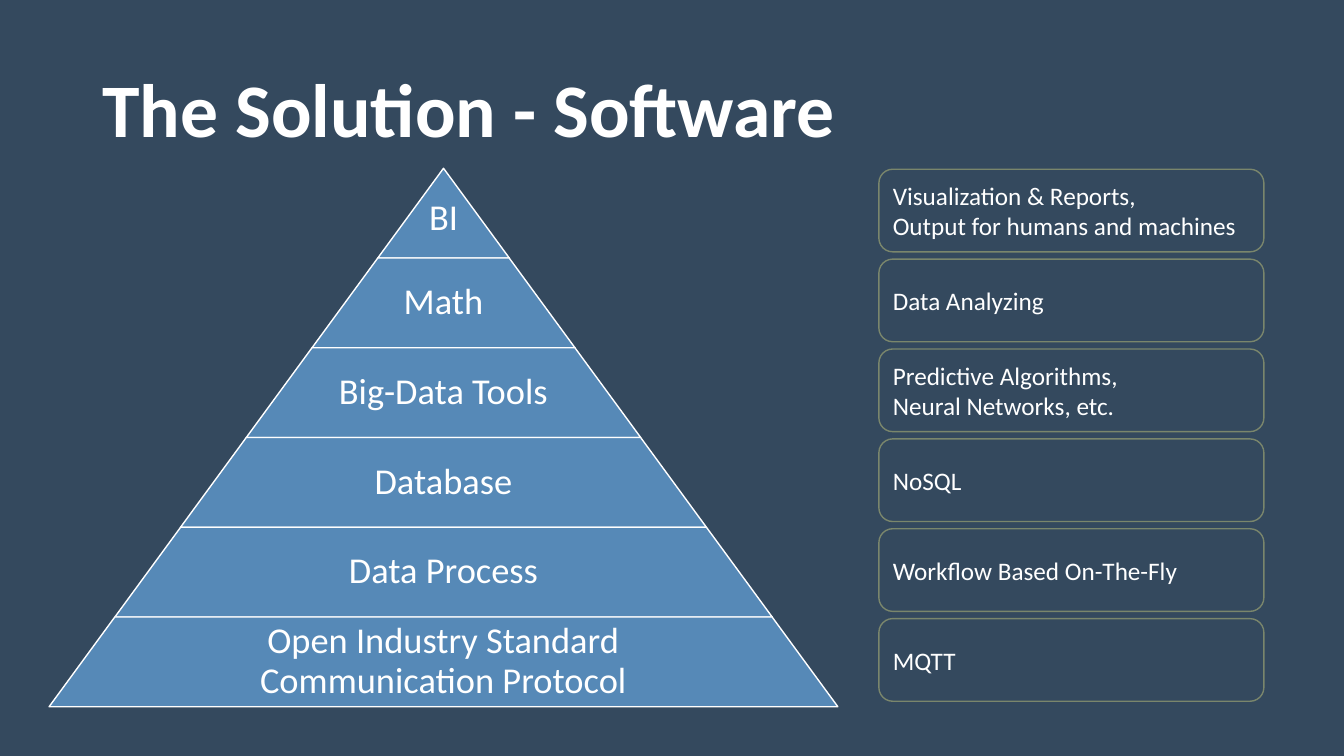
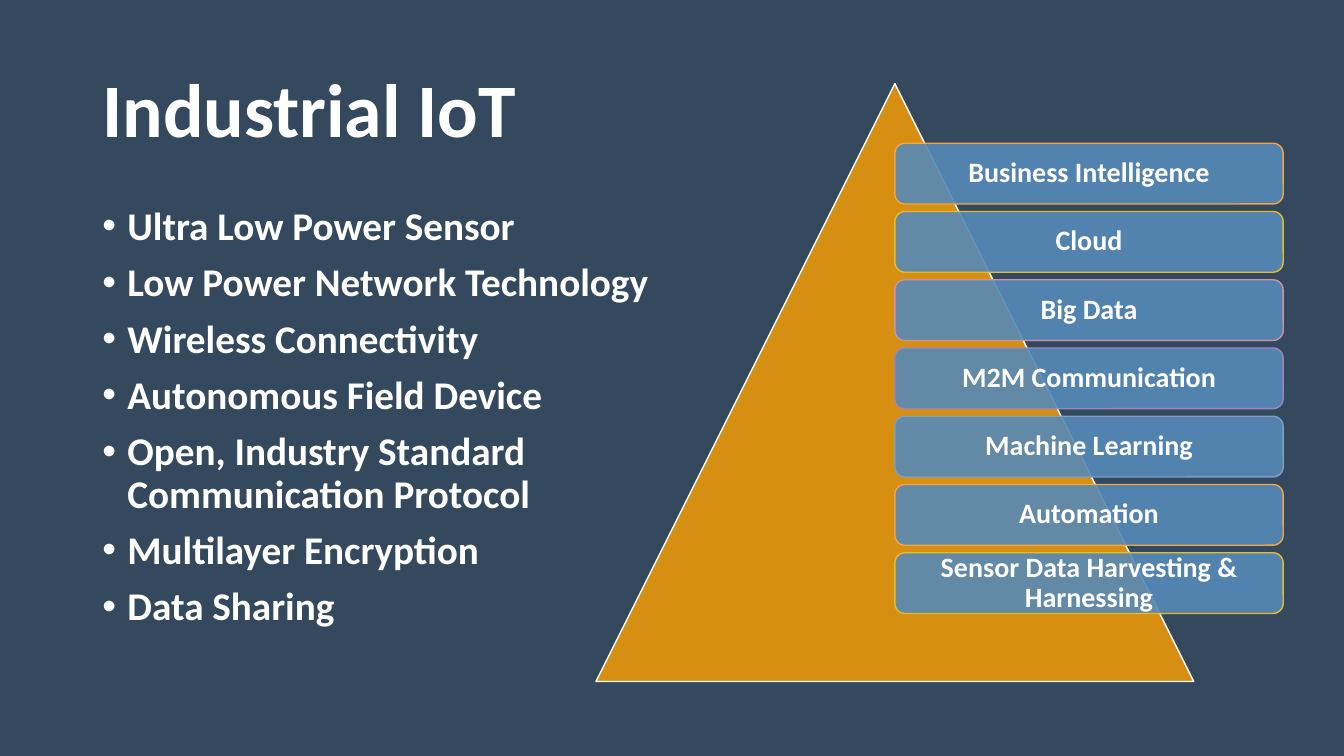
from pptx import Presentation
from pptx.dml.color import RGBColor
from pptx.enum import shapes, text
from pptx.oxml import ns
from pptx.util import Pt
from lxml import etree

# Shared style
NAVY = RGBColor(0x34, 0x49, 0x5E)
WHITE = RGBColor(0xFF, 0xFF, 0xFF)
BLUE = RGBColor(0x56, 0x89, 0xB7)
AMBER = RGBColor(0xD6, 0x8F, 0x10)
OLIVE = RGBColor(0x7A, 0x86, 0x6C)
ORANGE = RGBColor(0xF3, 0xA4, 0x47)
YELLOW = RGBColor(0xE7, 0xBC, 0x29)
PINK = RGBColor(0xD0, 0x92, 0xA7)
PURPLE = RGBColor(0x9C, 0x85, 0xC0)
STEEL = RGBColor(0x80, 0x9E, 0xC2)
FONT = "Calibri"
CENTER, LEFT = text.PP_ALIGN.CENTER, text.PP_ALIGN.LEFT
SHAPE = shapes.MSO_SHAPE

# Content: pyramid layers with their explanations, from the top down
SOFTWARE_LAYERS = [
    ("BI", ["Visualization & Reports,", "Output for humans and machines"]),
    ("Math", ["Data Analyzing"]),
    ("Big-Data Tools", ["Predictive Algorithms,", "Neural Networks, etc."]),
    ("Database", ["NoSQL"]),
    ("Data Process", ["Workflow Based On-The-Fly"]),
    ("Open Industry Standard Communication Protocol", ["MQTT"]),
]
IOT_FEATURES = [
    "Ultra Low Power Sensor",
    "Low Power Network Technology",
    "Wireless Connectivity",
    "Autonomous Field Device",
    "Open, Industry Standard Communication Protocol",
    "Multilayer Encryption",
    "Data Sharing",
]
IOT_LEVELS = [
    ("Business Intelligence", ORANGE),
    ("Cloud", YELLOW),
    ("Big Data", PINK),
    ("M2M Communication", PURPLE),
    ("Machine Learning", STEEL),
    ("Automation", ORANGE),
    ("Sensor Data Harvesting & Harnessing", YELLOW),
]


def write(frame, lines, size, bold=False, align=LEFT, spacing=1.0, gap=0, bullet=False):
    """Fill a text frame with one paragraph per line."""
    frame.word_wrap = True
    for i, line in enumerate(lines):
        paragraph = frame.paragraphs[0] if i == 0 else frame.add_paragraph()
        paragraph.alignment = align
        paragraph.line_spacing = spacing
        paragraph.space_before = Pt(gap if i else 0)
        if bullet:
            props = paragraph._p.get_or_add_pPr()
            props.set("marL", str(Pt(18)))
            props.set("indent", str(Pt(-18)))
            etree.SubElement(props, ns.qn("a:buFont"), typeface="Arial")
            etree.SubElement(props, ns.qn("a:buChar"), char="•")
        run = paragraph.add_run()
        run.text = line
        run.font.name, run.font.size, run.font.bold = FONT, Pt(size), bold
        run.font.color.rgb = WHITE


def set_margins(frame, side, top, bottom):
    frame.margin_left = frame.margin_right = Pt(side)
    frame.margin_top, frame.margin_bottom = Pt(top), Pt(bottom)


def add_block(slide, kind, left, top, width, height, fill, line, opacity=None):
    block = slide.shapes.add_shape(kind, Pt(left), Pt(top), Pt(width), Pt(height))
    block.shadow.inherit = False
    block.fill.solid()
    block.fill.fore_color.rgb = fill
    if opacity is not None:
        color = block._element.spPr.find(ns.qn("a:solidFill"))[0]
        etree.SubElement(color, ns.qn("a:alpha"), val=str(opacity * 1000))
    block.line.color.rgb = line
    block.line.width = Pt(1)
    block.text_frame.vertical_anchor = text.MSO_ANCHOR.MIDDLE
    return block


def add_titled_slide(prs, heading):
    slide = prs.slides.add_slide(prs.slide_layouts[5])
    title = slide.shapes.title
    title.left, title.top, title.width, title.height = Pt(66), Pt(28.8), Pt(828), Pt(104.4)
    title.text_frame.auto_size = text.MSO_AUTO_SIZE.NONE
    title.text_frame.vertical_anchor = text.MSO_ANCHOR.MIDDLE
    write(title.text_frame, [heading], 54, bold=True, spacing=0.9)
    return slide


def add_pyramid_layer(slide, rank, label):
    """Layer 1 is the tip; each layer is one tip width wider than the last."""
    apex_x, apex_y, tip_width, height = 316.8, 120.2, 93.9, 64.1
    width = rank * tip_width
    layer = add_block(slide, SHAPE.TRAPEZOID, apex_x - width / 2,
                      apex_y + (rank - 1) * height, width, height, BLUE, WHITE)
    layer.adjustments[0] = tip_width / 2 / height
    # Margins offset the trapezoid's own text inset, so labels sit mid-layer
    side = max(0, 0.175 * width - tip_width / 3)
    set_margins(layer.text_frame, side, 0, min(height / 3 / rank, 14))
    write(layer.text_frame, [label], 26, align=CENTER, spacing=0.9)


def add_explanation(slide, rank, lines):
    box = add_block(slide, SHAPE.ROUNDED_RECTANGLE, 627.8, 120.9 + (rank - 1) * 64.2,
                    275, 59, NAVY, OLIVE)
    write(box.text_frame, lines, 18)


def add_level(slide, index, label, outline):
    level = add_block(slide, SHAPE.ROUNDED_RECTANGLE, 639.2, 102.3 + index * 48.75,
                      277.4, 43.4, BLUE, outline, opacity=90)
    set_margins(level.text_frame, 6, 0, 0)
    write(level.text_frame, [label], 20, bold=True, align=CENTER, spacing=0.9)


def build_software(prs):
    slide = add_titled_slide(prs, "The Solution - Software")
    for rank, (label, explanation) in enumerate(SOFTWARE_LAYERS, 1):
        add_pyramid_layer(slide, rank, label)
        add_explanation(slide, rank, explanation)


def build_iot(prs):
    slide = add_titled_slide(prs, "Industrial IoT")
    features = slide.shapes.add_textbox(Pt(66), Pt(144), Pt(416), Pt(342.7))
    write(features.text_frame, IOT_FEATURES, 28, bold=True, spacing=0.9, gap=10, bullet=True)
    add_block(slide, SHAPE.ISOSCELES_TRIANGLE, 425.7, 59.8, 427, 427, AMBER, WHITE)
    for index, (label, outline) in enumerate(IOT_LEVELS):
        add_level(slide, index, label, outline)


def main():
    prs = Presentation()
    prs.slide_width, prs.slide_height = Pt(960), Pt(540)
    background = prs.slide_master.background.fill
    background.solid()
    background.fore_color.rgb = NAVY
    build_software(prs)
    build_iot(prs)
    prs.save("out.pptx")


if __name__ == "__main__":
    main()
